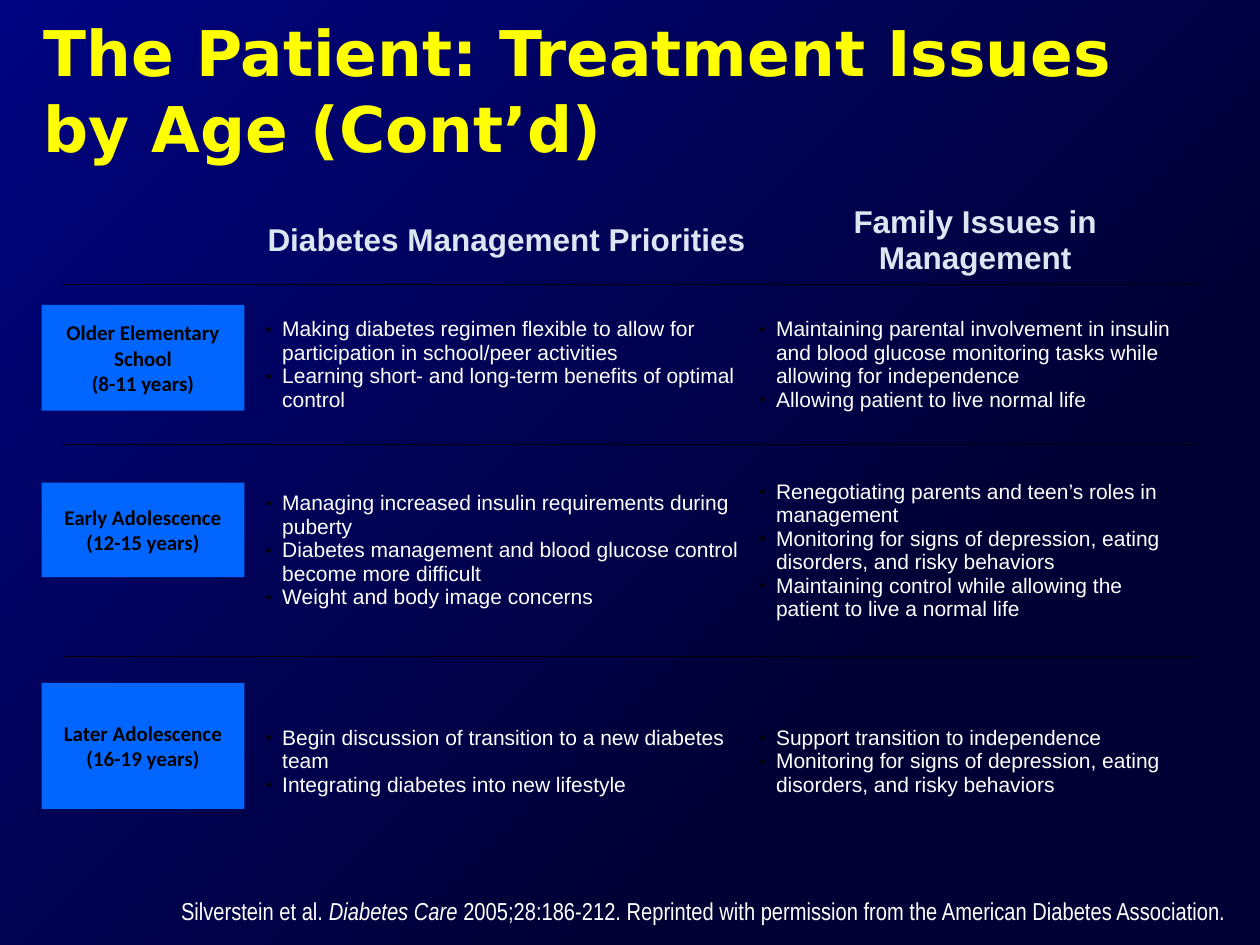
"""Build a slide with a table of diabetes treatment issues by patient age."""
import pptx
import pptx.dml.color
import pptx.enum.shapes
import pptx.enum.text
import pptx.oxml
import pptx.oxml.ns
import pptx.util
from lxml import etree

Inches = pptx.util.Inches
Anchor = pptx.enum.text.MSO_ANCHOR
Align = pptx.enum.text.PP_ALIGN
qn = pptx.oxml.ns.qn

THEME = {
    "night": "000035",
    "navy": "000480",
    "label": "0066FF",
    "rule": "000000",
    "title": {"name": "DejaVu Sans", "size": 36, "bold": True, "color": "FFFF00"},
    "header": {"name": "Arial", "size": 18, "bold": True, "color": "DCE6F2"},
    "body": {"name": "Arial", "size": 12, "bold": False, "color": "FFFFFF"},
    "age": {"name": "Calibri", "size": 12, "bold": True, "color": "000000"},
    "source": {"name": "Arial Narrow", "size": 14, "bold": False, "color": "FFFFFF"},
}
HEADERS = ["", "Diabetes Management Priorities", "Family Issues in Management"]
AGE_GROUPS = [
    {
        "label": "Older Elementary\vSchool\v(8-11 years)", "top": 2.42, "height": 0.84,
        "issues": [
            ["Making diabetes regimen flexible to allow for participation in school/peer activities",
             "Learning short- and long-term benefits of optimal control"],
            ["Maintaining parental involvement in insulin and blood glucose monitoring tasks "
             "while allowing for independence",
             "Allowing patient to live normal life"],
        ],
    },
    {
        "label": "Early Adolescence\v(12-15 years)", "top": 3.83, "height": 0.75,
        "issues": [
            ["Managing increased insulin requirements during puberty",
             "Diabetes management and blood glucose control become more difficult",
             "Weight and body image concerns"],
            ["Renegotiating parents and teen’s roles in management",
             "Monitoring for signs of depression, eating disorders, and risky behaviors",
             "Maintaining control while allowing the patient to live a normal life"],
        ],
    },
    {
        "label": "Later Adolescence\v(16-19 years)", "top": 5.42, "height": 1,
        "issues": [
            ["Begin discussion of transition to a new diabetes team",
             "Integrating diabetes into new lifestyle"],
            ["Support transition to independence",
             "Monitoring for signs of depression, eating disorders, and risky behaviors"],
        ],
    },
]


def set_font(font, style):
    values = {"name": style["name"], "size": pptx.util.Pt(style["size"]), "bold": style["bold"]}
    for attribute, value in values.items():
        setattr(font, attribute, value)
    font.color.rgb = pptx.dml.color.RGBColor.from_string(style["color"])


def write_lines(text_frame, lines, style, align, bulleted=False):
    for index, line in enumerate(lines):
        paragraph = text_frame.paragraphs[0] if index == 0 else text_frame.add_paragraph()
        paragraph.text = line
        paragraph.alignment = align
        if bulleted:
            properties = paragraph._p.get_or_add_pPr()
            properties.set("marL", str(Inches(0.13)))
            properties.set("indent", str(Inches(-0.13)))
            color = etree.SubElement(properties, qn("a:buClr"))
            etree.SubElement(color, qn("a:srgbClr"), val=THEME["rule"])
            etree.SubElement(properties, qn("a:buSzPct"), val="80000")
            etree.SubElement(properties, qn("a:buFont"), typeface="Arial")
            etree.SubElement(properties, qn("a:buChar"), char="•")
        for run in paragraph.runs:
            set_font(run.font, style)


presentation = pptx.Presentation()
presentation.slide_width = Inches(10)
presentation.slide_height = Inches(7.5)
slide = presentation.slides.add_slide(presentation.slide_layouts[6])

background = slide.background.fill
background.gradient()
background.gradient_angle = 315
for stop, position, color in zip(background.gradient_stops, (0, 0.7), ("navy", "night")):
    stop.position = position
    stop.color.rgb = pptx.dml.color.RGBColor.from_string(THEME[color])

title = slide.shapes.add_textbox(Inches(0.25), Inches(0), Inches(9.25), Inches(1.42))
title.text_frame.word_wrap = True
title.text_frame.vertical_anchor = Anchor.MIDDLE
write_lines(title.text_frame, ["The Patient: Treatment Issues by Age (Cont’d)"],
            THEME["title"], Align.LEFT)

frame = slide.shapes.add_table(4, 3, Inches(0.5), Inches(1.56), Inches(9), Inches(5.32))
table = frame.table
table.first_row = False
table.horz_banding = False
table._tbl.tblPr.find(qn("a:tableStyleId")).text = "{2D5ABB26-0587-4C30-8999-92F81FD0307C}"
for column, width in zip(table.columns, (1.56, 3.92, 3.52)):
    column.width = Inches(width)
for row, height in zip(table.rows, (0.7, 1.27, 1.68, 1.67)):
    row.height = Inches(height)

cell_format = {
    "vertical_anchor": Anchor.MIDDLE,
    "margin_left": Inches(0.05), "margin_right": Inches(0.05),
    "margin_top": Inches(0.01), "margin_bottom": Inches(0.01),
}
contents = [[[header] for header in HEADERS]]
contents += [[[""]] + group["issues"] for group in AGE_GROUPS]
for row_index, row_contents in enumerate(contents):
    is_header = row_index == 0
    sides = (["a:lnT"] if row_index > 0 else []) + (["a:lnB"] if row_index < 3 else [])
    for column_index, lines in enumerate(row_contents):
        cell = table.cell(row_index, column_index)
        for attribute, value in cell_format.items():
            setattr(cell, attribute, value)
        for side in sides:
            border = etree.SubElement(cell._tc.get_or_add_tcPr(), qn(side), w=str(pptx.util.Pt(1)))
            border_fill = etree.SubElement(border, qn("a:solidFill"))
            etree.SubElement(border_fill, qn("a:srgbClr"), val=THEME["rule"])
        cell.fill.background()
        if column_index > 0:
            write_lines(cell.text_frame, lines, THEME["header" if is_header else "body"],
                        Align.CENTER if is_header else Align.LEFT, bulleted=not is_header)

label_format = {
    "word_wrap": True, "vertical_anchor": Anchor.MIDDLE,
    "margin_left": Inches(0.05), "margin_right": Inches(0.05),
    "margin_top": Inches(0.05), "margin_bottom": Inches(0.05),
}
for group in AGE_GROUPS:
    label = slide.shapes.add_shape(
        pptx.enum.shapes.MSO_SHAPE.RECTANGLE,
        Inches(0.33), Inches(group["top"]), Inches(1.61), Inches(group["height"]))
    label.shadow.inherit = False
    label.fill.solid()
    label.fill.fore_color.rgb = pptx.dml.color.RGBColor.from_string(THEME["label"])
    label.line.fill.background()
    for attribute, value in label_format.items():
        setattr(label.text_frame, attribute, value)
    write_lines(label.text_frame, [group["label"]], THEME["age"], Align.CENTER)

source = slide.shapes.add_textbox(Inches(0.81), Inches(7.11), Inches(8.92), Inches(0.24))
source_format = {"word_wrap": True, "margin_left": 0, "margin_right": 0,
                 "margin_top": 0, "margin_bottom": 0}
for attribute, value in source_format.items():
    setattr(source.text_frame, attribute, value)
citation = source.text_frame.paragraphs[0]
citation.alignment = Align.RIGHT
for text, italic in (
    ("Silverstein et al. ", False),
    ("Diabetes Care ", True),
    ("2005;28:186-212. Reprinted with permission from the American Diabetes Association.", False),
):
    run = citation.add_run()
    run.text = text
    set_font(run.font, THEME["source"])
    run.font.italic = italic

presentation.save("out.pptx")
